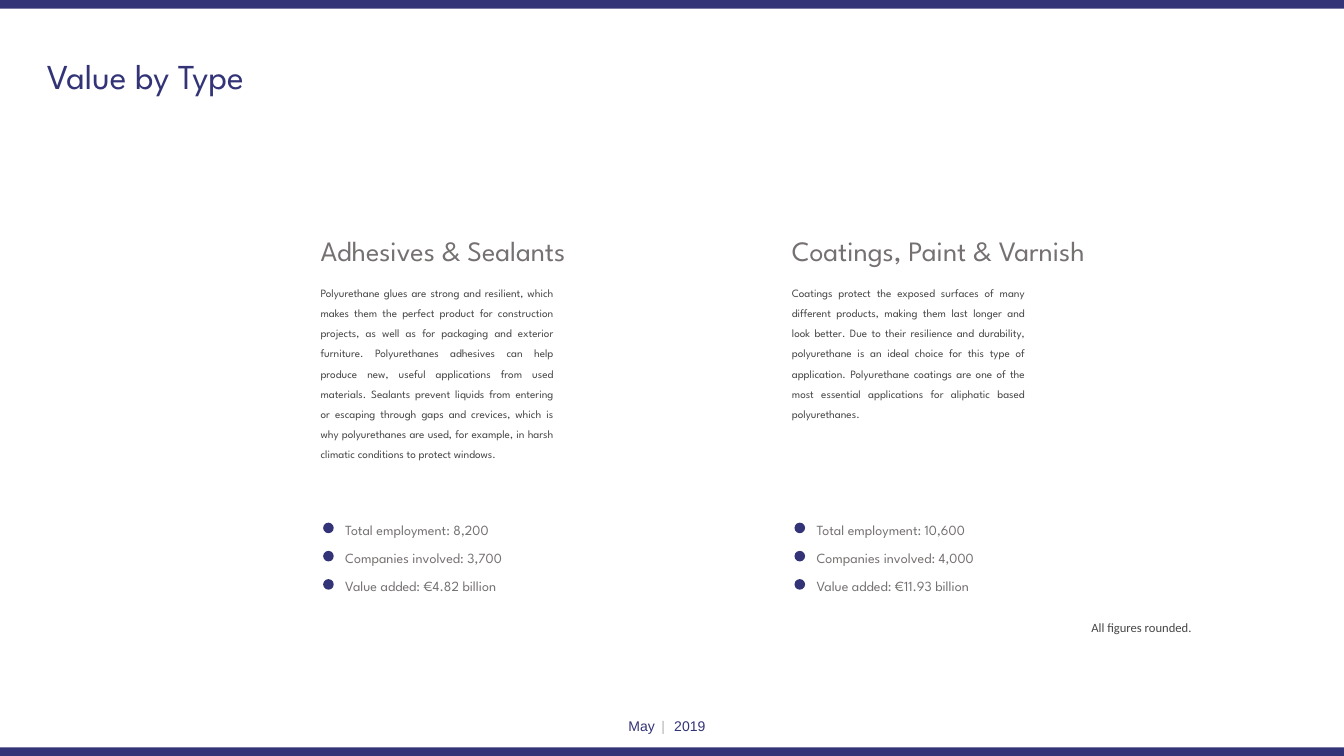
from pptx import Presentation
from pptx.dml.color import RGBColor
from pptx.enum.shapes import MSO_SHAPE
from pptx.enum.text import MSO_ANCHOR, MSO_AUTO_SIZE, PP_ALIGN
from pptx.util import Inches, Pt

RECT, OVAL = MSO_SHAPE.RECTANGLE, MSO_SHAPE.OVAL
LEFT, CENTER, JUSTIFY = PP_ALIGN.LEFT, PP_ALIGN.CENTER, PP_ALIGN.JUSTIFY
TOP, FIXED = MSO_ANCHOR.TOP, MSO_AUTO_SIZE.NONE

NAVY = RGBColor(0x33, 0x33, 0x77)
GREY = RGBColor(0x76, 0x71, 0x71)
DARK = RGBColor(0x46, 0x46, 0x46)
PALE = RGBColor(0xB4, 0xB4, 0xB4)
FONT = "League Spartan"

WIDTH, HEIGHT, BAND = 26.66, 15, 0.17
FACT_TOP, FACT_STEP, DOT = 10.29, 0.56, 0.21

TYPES = [
    (6.26, 6.18, "Adhesives & Sealants",
     "Polyurethane glues are strong and resilient, which makes them the perfect "
     "product for construction projects, as well as for packaging and exterior "
     "furniture. Polyurethanes adhesives can help produce new, useful applications "
     "from used materials. Sealants prevent liquids from entering or escaping "
     "through gaps and crevices, which is why polyurethanes are used, for example, "
     "in harsh climatic conditions to protect windows.",
     4.49, ("8,200", "3,700", "€4.82 billion")),
    (15.61, 7.81, "Coatings, Paint & Varnish",
     "Coatings protect the exposed surfaces of many different products, making "
     "them last longer and look better. Due to their resilience and durability, "
     "polyurethane is an ideal choice for this type of application. Polyurethane "
     "coatings are one of the most essential applications for aliphatic based "
     "polyurethanes.",
     3.28, ("10,600", "4,000", "€11.93 billion")),
]
LABELS = ("Total employment", "Companies involved", "Value added")


def style(run, size, color, font=FONT):
    run.font.size = Pt(size)
    run.font.name = font
    run.font.color.rgb = color


def add_text(slide, x, y, w, h, text, size, color, font=FONT, align=LEFT, wrap=True):
    box = slide.shapes.add_textbox(Inches(x), Inches(y), Inches(w), Inches(h))
    box.text_frame.word_wrap = wrap
    box.text_frame.text = text
    para = box.text_frame.paragraphs[0]
    para.alignment = align
    style(para.runs[0], size, color, font)
    return para


def add_solid(slide, kind, x, y, w, h):
    shape = slide.shapes.add_shape(kind, Inches(x), Inches(y), Inches(w), Inches(h))
    shape.shadow.inherit = False
    shape.fill.solid()
    shape.fill.fore_color.rgb = NAVY
    shape.line.fill.background()


def add_title(slide, text):
    title = slide.shapes.title
    title.left, title.top = Inches(0.83), Inches(1.03)
    title.width, title.height = Inches(7.09), Inches(0.94)
    frame = title.text_frame
    frame.text = text
    frame.auto_size = FIXED
    frame.vertical_anchor = TOP
    frame.paragraphs[0].alignment = LEFT
    style(frame.paragraphs[0].runs[0], 50, NAVY)


def add_footer(slide):
    para = add_text(slide, 9.02, 14.19, 8.42, 0.44, "May", 20, NAVY, "Arial", CENTER)
    for text, color in ((" | ", PALE), ("2019", NAVY)):
        run = para.add_run()
        run.text = text
        style(run, 20, color, "Arial")
    # Letter spacing widens the gaps around the bar
    para.runs[1].font._element.set("spc", "370")


def add_type(slide, x, width, name, body, height, values):
    """Draw one product type: heading, description and dotted facts."""
    add_text(slide, x, 4.58, width, 0.77, name, 40, GREY)
    para = add_text(slide, x, 5.5, 4.82, height, body, 16, DARK, align=JUSTIFY)
    para.line_spacing = 1.5
    for i, (label, value) in enumerate(zip(LABELS, values)):
        y = FACT_TOP + i * FACT_STEP
        add_solid(slide, OVAL, x + 0.15, y + 0.08, DOT, DOT)
        add_text(slide, x + 0.49, y, 4.34, 0.44, f"{label}: {value}", 20, GREY)


def main():
    deck = Presentation()
    deck.slide_width, deck.slide_height = Inches(WIDTH), Inches(HEIGHT)
    slide = deck.slides.add_slide(deck.slide_layouts[5])
    add_footer(slide)
    for y in (0, HEIGHT - BAND):
        add_solid(slide, RECT, 0, y, WIDTH, BAND)
    add_title(slide, "Value by Type")
    for item in TYPES:
        add_type(slide, *item)
    add_text(slide, 21.55, 12.25, 2.21, 0.4, "All figures rounded.", 18, DARK,
             "Calibri", wrap=False)
    deck.save("out.pptx")


if __name__ == "__main__":
    main()
